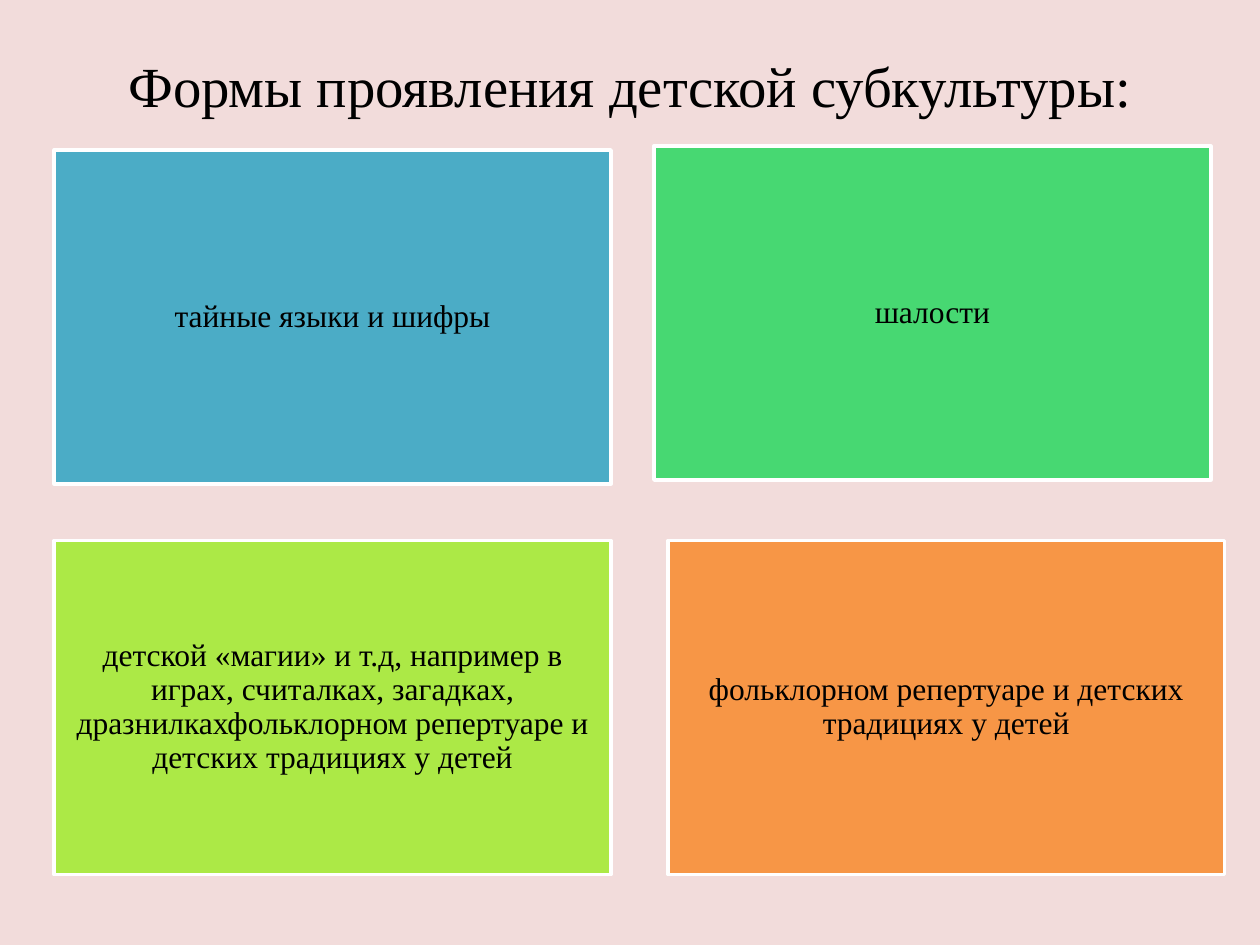
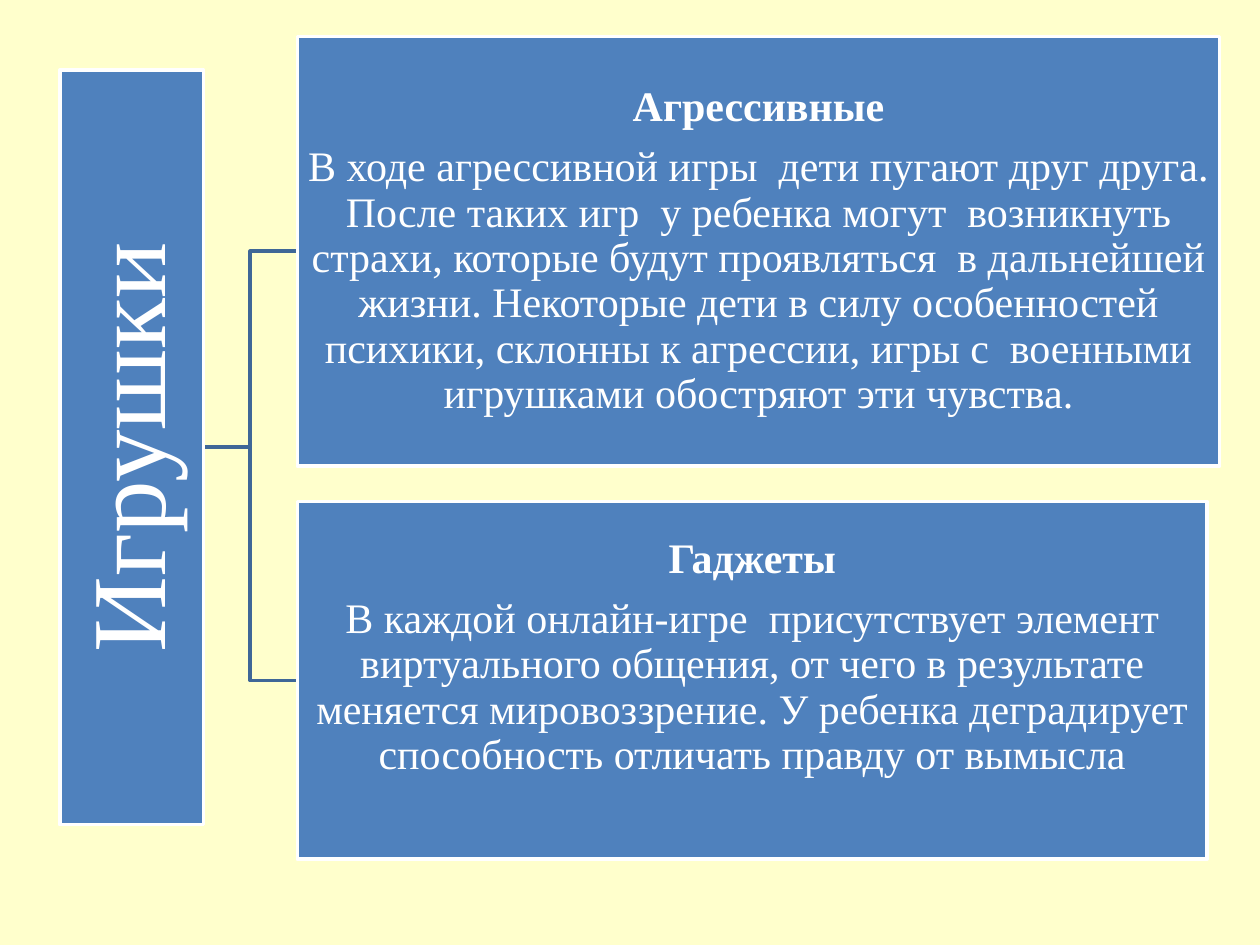
import pptx
import pptx.dml.color
import pptx.enum.shapes
import pptx.enum.text
import pptx.util
from lxml import etree

Inches = pptx.util.Inches
Pt = pptx.util.Pt
RGBColor = pptx.dml.color.RGBColor
Anchor = pptx.enum.text.MSO_ANCHOR
Align = pptx.enum.text.PP_ALIGN

FONT = "Times New Roman"
PINK = RGBColor(0xF2, 0xDC, 0xDB)
CREAM = RGBColor(0xFF, 0xFF, 0xCC)
BLACK = RGBColor(0, 0, 0)
WHITE = RGBColor(0xFF, 0xFF, 0xFF)
TEAL = RGBColor(0x4B, 0xAC, 0xC6)
GREEN = RGBColor(0x47, 0xD8, 0x72)
LIME = RGBColor(0xAC, 0xE9, 0x46)
ORANGE = RGBColor(0xF7, 0x96, 0x46)
BLUE = RGBColor(0x4F, 0x81, 0xBD)
DARK_BLUE = RGBColor(0x3F, 0x67, 0x97)


def add_page(color):
    page = deck.slides.add_slide(deck.slide_layouts[6])
    page.background.fill.solid()
    page.background.fill.fore_color.rgb = color
    return page


def add_block(page, place, fill, lines, size, color, inset):
    """Add a white-edged rectangle with centred text, one paragraph per line."""
    block = page.shapes.add_shape(
        pptx.enum.shapes.MSO_SHAPE.RECTANGLE, *[Inches(value) for value in place])
    block.shadow.inherit = False
    block.fill.solid()
    block.fill.fore_color.rgb = fill
    block.line.color.rgb = WHITE
    block.line.width = Pt(2)
    frame = block.text_frame
    frame.word_wrap = True
    frame.vertical_anchor = Anchor.MIDDLE
    frame.margin_left = frame.margin_right = Inches(inset)
    frame.margin_top = frame.margin_bottom = Inches(inset)
    frame.text = "\n".join(lines)
    for para in frame.paragraphs:
        para.alignment = Align.CENTER
        para.line_spacing = 0.9
        para.space_after = Pt(0.35 * size)
        para.font.name = FONT
        para.font.size = Pt(size)
        para.font.color.rgb = color
    return block


deck = pptx.Presentation()
deck.slide_width = Inches(10)
deck.slide_height = Inches(7.5)

# Forms of the children's subculture
page = add_page(PINK)
title = page.shapes.add_textbox(Inches(0.5), Inches(0.3), Inches(9), Inches(1.25))
title.text_frame.word_wrap = True
title.text_frame.margin_top = Inches(0.1)
para = title.text_frame.paragraphs[0]
para.text = "Формы проявления детской субкультуры:"
para.alignment = Align.CENTER
para.font.name = FONT
para.font.size = Pt(32.4)
para.font.color.rgb = BLACK

forms = [
    (0.43, 1.19, TEAL, "тайные языки и шифры"),
    (5.19, 1.16, GREEN, "шалости"),
    (0.43, 4.29, LIME, "детской «магии» и т.д, например в играх, считалках, загадках, "
     "дразнилкахфольклорном репертуаре и детских традициях у детей"),
    (5.3, 4.29, ORANGE, "фольклорном репертуаре и детских традициях у детей"),
]
for left, top, fill, text in forms:
    add_block(page, (left, top, 4.42, 2.65), fill, [text], 18, BLACK, 0.07)

# Toys: a root block branching to two kinds
page = add_page(CREAM)
root_right, root_middle, kind_left = 1.61, 3.55, 2.36
kinds = [
    (0.29, 7.32, 3.41, 0.02, "Агрессивные",
     "В ходе агрессивной игры  дети пугают друг друга. После таких игр  у ребенка "
     "могут  возникнуть страхи, которые будут проявляться  в дальнейшей жизни. "
     "Некоторые дети в силу особенностей психики, склонны к агрессии, игры с  военными "
     "игрушками обостряют эти чувства."),
    (3.98, 7.22, 2.84, 0.38, "Гаджеты",
     "В каждой онлайн-игре  присутствует элемент виртуального общения, от чего в "
     "результате меняется мировоззрение. У ребенка деградирует способность отличать "
     "правду от вымысла"),
]
for top, width, height, bottom_inset, heading, text in kinds:
    branch = page.shapes.add_connector(
        pptx.enum.shapes.MSO_CONNECTOR.ELBOW, Inches(root_right), Inches(root_middle),
        Inches(kind_left), Inches(top + height / 2))
    branch.line.color.rgb = DARK_BLUE
    branch.line.width = Pt(2)
    etree.SubElement(branch._element.spPr, pptx.oxml.ns.qn("a:effectLst"))
    block = add_block(page, (kind_left, top, width, height), BLUE,
                      [heading, text], 24, WHITE, 0.02)
    block.text_frame.margin_bottom = Inches(bottom_inset)
    block.text_frame.paragraphs[0].font.bold = True

root = add_block(page, (-1.95, 2.98, 5.99, 1.14), BLUE, ["Игрушки"], 60, WHITE, 0.04)
root.rotation = 270

deck.save("out.pptx")
